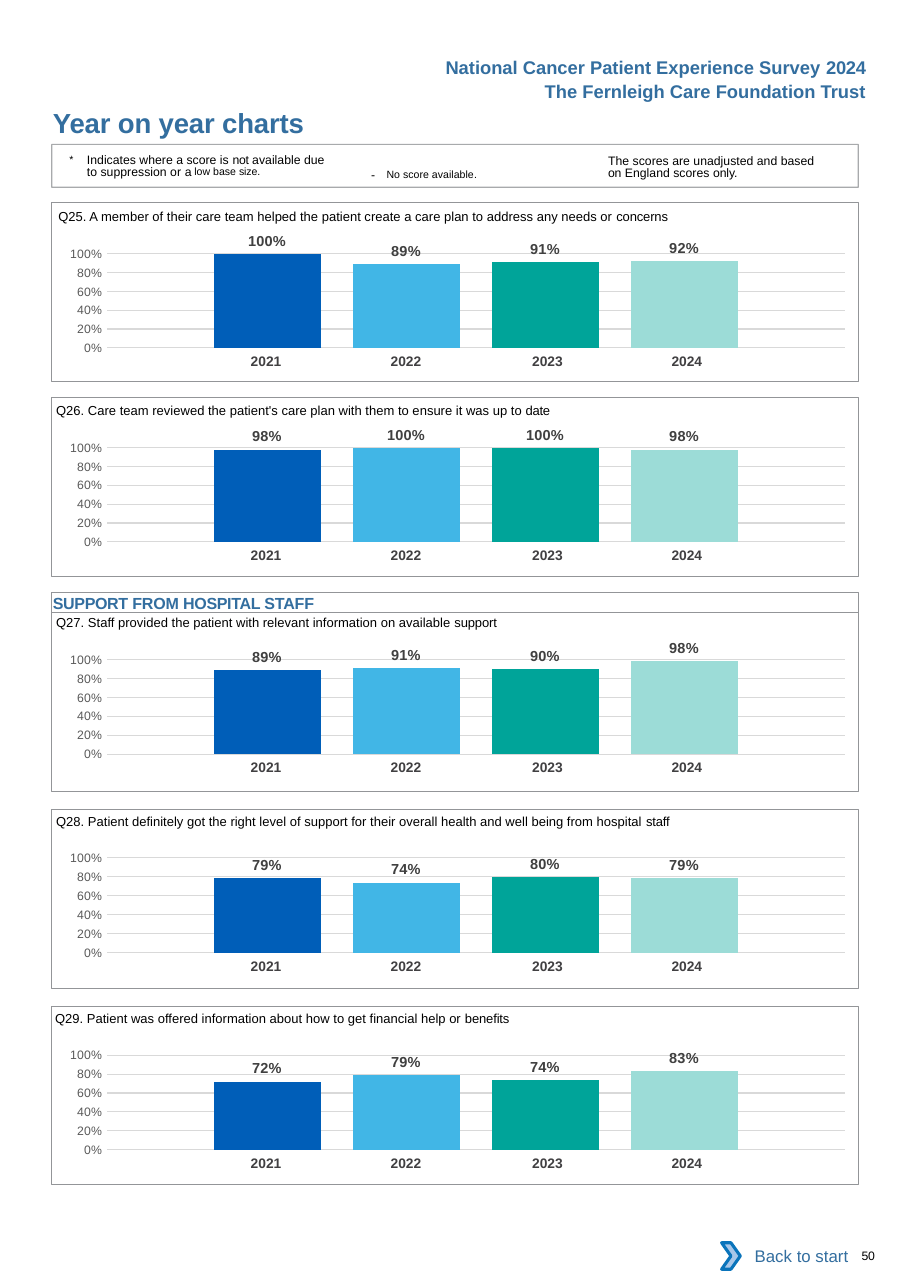
from collections import namedtuple
from lxml.etree import SubElement
from pptx import Presentation
from pptx.chart.data import CategoryChartData
from pptx.dml.color import RGBColor
from pptx.enum.chart import XL_CHART_TYPE as ChartType, XL_LABEL_POSITION as LabelPosition
from pptx.enum.chart import XL_TICK_MARK as TickMark
from pptx.enum.shapes import MSO_SHAPE as Shape
from pptx.enum.text import MSO_ANCHOR as Anchor, MSO_AUTO_SIZE as AutoSize, PP_ALIGN as Align
from pptx.oxml.ns import qn
from pptx.util import Emu, Pt

PX = 9144  # 100 px to the inch
BLUE, BLACK, GREY = "336E9F", "000000", "939598"
YEAR_COLOURS = {"2021": "005EB8", "2022": "41B6E6", "2023": "00A499", "2024": "9CDCD7"}
LEFT, WIDTH, PANEL_HEIGHT = 47, 732, 162

Question = namedtuple("Question", "top chart_top text_left runs scores")
QUESTIONS = [
    Question(184, 211, 53, [
        ("Q25. A member of their care team helped the patient create a care plan "
         "to address any needs or ", 0), ("concerns", -0.1)], (1, 0.89, 0.91, 0.92)),
    Question(361, 387, 51, [
        ("Q26. Care team reviewed the patient's care plan with them to ensure it was up to", 0),
        (" date", -0.2)], (0.98, 1, 1, 0.98)),
    Question(556, 580, 51, [
        ("Q27. Staff provided the patient with relevant information on available ", 0),
        ("support", -0.1)], (0.89, 0.91, 0.9, 0.98)),
    Question(735, 760, 51, [
        ("Q28. Patient definitely got the right level of support for their overall health "
         "and well being from hospital ", 0), ("staff", -0.1)], (0.79, 0.74, 0.8, 0.79)),
    Question(913, 939, 50, [
        ("Q29. Patient was offered information about how to get financial help or ", 0),
        ("benefits", -0.1)], (0.72, 0.79, 0.74, 0.83)),
]


def px(*lengths):
    return [Emu(length * PX) for length in lengths]


def colour(hex_string):
    return RGBColor.from_string(hex_string)


def style_font(font, size, hex_string, bold=False):
    font.name, font.size, font.bold = "Arial", Pt(size), bold
    font.color.rgb = colour(hex_string)


def add_runs(paragraph, runs, size, hex_string, bold=False):
    """Add (text, letter spacing[, raise in percent]) runs; raised runs are 12 pt."""
    for text, spacing, *raised in runs:
        run = paragraph.add_run()
        run.text = text
        style_font(run.font, 12 if raised else size, hex_string, bold)
        properties = run.font._element
        if spacing:
            properties.set("spc", str(round(spacing * 100)))
        if raised:
            properties.set("baseline", str(raised[0] * 1000))


def set_frame(frame, insets, anchor=Anchor.TOP, wrap=True):
    frame.auto_size = AutoSize.NONE
    frame.word_wrap, frame.vertical_anchor = wrap, anchor
    (frame.margin_left, frame.margin_top,
     frame.margin_right, frame.margin_bottom) = px(*insets)
    return frame.paragraphs[0]


def add_text(slide, box, runs, size, hex_string=BLACK, bold=False,
             insets=(0, 0, 0, 0), align=Align.LEFT, wrap=True):
    frame = slide.shapes.add_textbox(*px(*box)).text_frame
    paragraph = set_frame(frame, insets, wrap=wrap)
    paragraph.alignment = align
    add_runs(paragraph, runs, size, hex_string, bold)
    return paragraph


def add_block(slide, kind, box, fill=None, line=None, weight=0.5):
    block = slide.shapes.add_shape(kind, *px(*box))
    block.shadow.inherit = False
    if fill:
        block.fill.solid()
        block.fill.fore_color.rgb = colour(fill)
    else:
        block.fill.background()
    if line:
        block.line.color.rgb = colour(line)
        block.line.width = Pt(weight)
    else:
        block.line.fill.background()
    return block


def add_heading(slide):
    for top, runs in ((46, [("National Cancer Patient Experience Survey ", 0), ("2024", -0.2)]),
                      (68, [("The Fernleigh Care Foundation Trust", 0)])):
        add_text(slide, (392, top, 404, 30), runs, 12, BLUE, True,
                 (10, 5, 10, 5), Align.RIGHT, wrap=False)
    title = slide.shapes.title
    title.left, title.top, title.width, title.height = px(48, 96, 450, 30)
    paragraph = set_frame(title.text_frame, (0, 0, 0, 0))
    paragraph.alignment = Align.LEFT
    add_runs(paragraph, [("Year on year charts", -0.1)], 18, BLUE, True)


def add_key(slide, left, top):
    outline = add_block(slide, Shape.RECTANGLE, (left, top, WIDTH, 39), line=GREY, weight=0.75)
    line_colour = outline._element.spPr.find(".//" + qn("a:srgbClr"))
    SubElement(line_colour, qn("a:alpha"), val="80000")
    suppressed = add_text(slide, (left + 16, top + 7, 237, 30), [
        ("*", 0, 3), ("\tIndicates where a score is ", 0), ("not ", -0.2),
        ("available due to suppression or ", 0), ("a ", -0.5),
        ("low base", 0, 7), (" size.", -0.1, 7)], 8, insets=(0, 3, 0, 0))
    hanging = suppressed._p.get_or_add_pPr()
    hanging.set("marL", str(16 * PX))
    hanging.set("indent", str(-16 * PX))
    add_text(slide, (left + 280, top + 10, 183, 24), [
        ("- ", 2.6), ("No score available", 0, 3), (".", -0.1, 3)], 8, insets=(10, 5, 10, 5))
    unadjusted = add_text(slide, (left + 505, top + 7, 199, 27), [
        ("The scores are unadjusted and based", 0), (" on", -0.2),
        (" England scores ", 0), ("only.", -0.1)], 8, insets=(0, 3, 0, 0))
    for paragraph in (suppressed, unadjusted):
        paragraph.line_spacing = Pt(8.1)


def add_years(slide, left, top):
    table = slide.shapes.add_table(1, len(YEAR_COLOURS), *px(left, top, 515, 27)).table
    table.first_row = table.horz_banding = False
    style_id = table._tbl.tblPr.find(qn("a:tableStyleId"))
    style_id.text = "{2D5ABB26-0587-4C30-8999-92F81FD0307C}"
    layout = zip(YEAR_COLOURS, (127, 127, 134, 127), (0, 0, 4, 12))
    for column, (year, width, right_inset) in enumerate(layout):
        table.columns[column].width = Emu(width * PX)
        cell = table.cell(0, column)
        cell.fill.background()
        (cell.margin_left, cell.margin_top,
         cell.margin_right, cell.margin_bottom) = px(10, 5, right_inset, 5)
        paragraph = cell.text_frame.paragraphs[0]
        paragraph.alignment = Align.CENTER
        add_runs(paragraph, [(year, 0)], 9, "414042", True)


def set_plot_area(chart, **fractions):
    plot_area = chart._chartSpace.chart.plotArea
    layout = plot_area.find(qn("c:layout"))
    if layout is None:
        layout = plot_area.makeelement(qn("c:layout"))
        plot_area.insert(0, layout)
    manual = SubElement(layout, qn("c:manualLayout"))
    settings = {"layoutTarget": "inner", "xMode": "edge", "yMode": "edge", **fractions}
    for name, value in settings.items():
        SubElement(manual, qn("c:" + name), val=str(value))


def add_scores(slide, left, top, scores):
    data = CategoryChartData()
    data.categories = ["1"]
    for number, score in enumerate(scores, 1):
        data.add_series(f"Series {number}", [score])
    chart = slide.shapes.add_chart(
        ChartType.COLUMN_CLUSTERED, *px(left, top, WIDTH, 129), data).chart
    chart.has_legend = chart.has_title = False
    chart.font.name, chart.font.size = "Calibri", Pt(10)
    chart.font.color.rgb = colour(BLACK)
    set_plot_area(chart, x=0.079, y=0.145, w=0.915, h=0.666)
    chart.category_axis.visible = False

    axis = chart.value_axis
    axis.minimum_scale, axis.maximum_scale, axis.major_unit = 0, 1, 0.2
    axis.major_tick_mark = axis.minor_tick_mark = TickMark.NONE
    axis.format.line.fill.background()
    axis.major_gridlines.format.line.color.rgb = colour("D9D9D9")
    axis.major_gridlines.format.line.width = Pt(0.75)

    plot = chart.plots[0]
    plot.vary_by_categories = False
    plot.gap_width, plot.overlap = 200, -30
    for series, fill in zip(plot.series, YEAR_COLOURS.values()):
        series.format.fill.solid()
        series.format.fill.fore_color.rgb = colour(fill)
        labels = series.data_labels
        labels.show_value, labels.position = True, LabelPosition.OUTSIDE_END
        style_font(labels.font, 9.5, "404040", True)
        labels.number_format, labels.number_format_is_linked = "0%", False
    style_font(axis.tick_labels.font, 8, "595959")
    axis.tick_labels.number_format = "0%"
    axis.tick_labels.number_format_is_linked = False


def add_question(slide, question):
    add_years(slide, LEFT + 126, question.chart_top + 105)
    add_scores(slide, LEFT - 8, question.chart_top, question.scores)
    add_block(slide, Shape.RECTANGLE, (LEFT, question.top, WIDTH, PANEL_HEIGHT), line=GREY)
    add_text(slide, (question.text_left, question.chart_top - 31, 720, 24),
             question.runs, 8.5, insets=(0, 9, 0, 0))


def add_section(slide, left, top):
    band = add_block(slide, Shape.RECTANGLE, (left, top, WIDTH, 18), line=GREY)
    paragraph = set_frame(band.text_frame, (1, 1, 0, 0))
    paragraph.alignment = Align.LEFT
    add_runs(paragraph, [("SUPPORT ", -0.2), ("FROM ", -0.1), ("HOSPITAL ", -0.2),
                         ("STAFF", -0.1)], 10.5, BLUE, True)


def add_footer(slide, left, top):
    back = add_block(slide, Shape.RECTANGLE, (left + 7, top, 118, 42), fill="FFFFFF")
    paragraph = set_frame(back.text_frame, (10, 5, 10, 5), Anchor.MIDDLE)
    paragraph.alignment = Align.RIGHT
    add_runs(paragraph, [("Back to start", 0)], 11, BLUE)
    add_block(slide, Shape.CHEVRON, (left, top + 9, 17, 24), "A8C7E9", "0A74BB", 2)
    add_text(slide, (left + 127, top + 14, 41, 13), [("50", -0.2)], 8)


def main():
    deck = Presentation()
    deck.slide_width, deck.slide_height = px(826, 1169)
    slide = deck.slides.add_slide(deck.slide_layouts[5])
    add_heading(slide)
    add_key(slide, LEFT, 131)
    for question in QUESTIONS:
        add_question(slide, question)
    add_section(slide, LEFT, 538)
    add_footer(slide, 655, 1119)
    deck.save("out.pptx")


if __name__ == "__main__":
    main()
